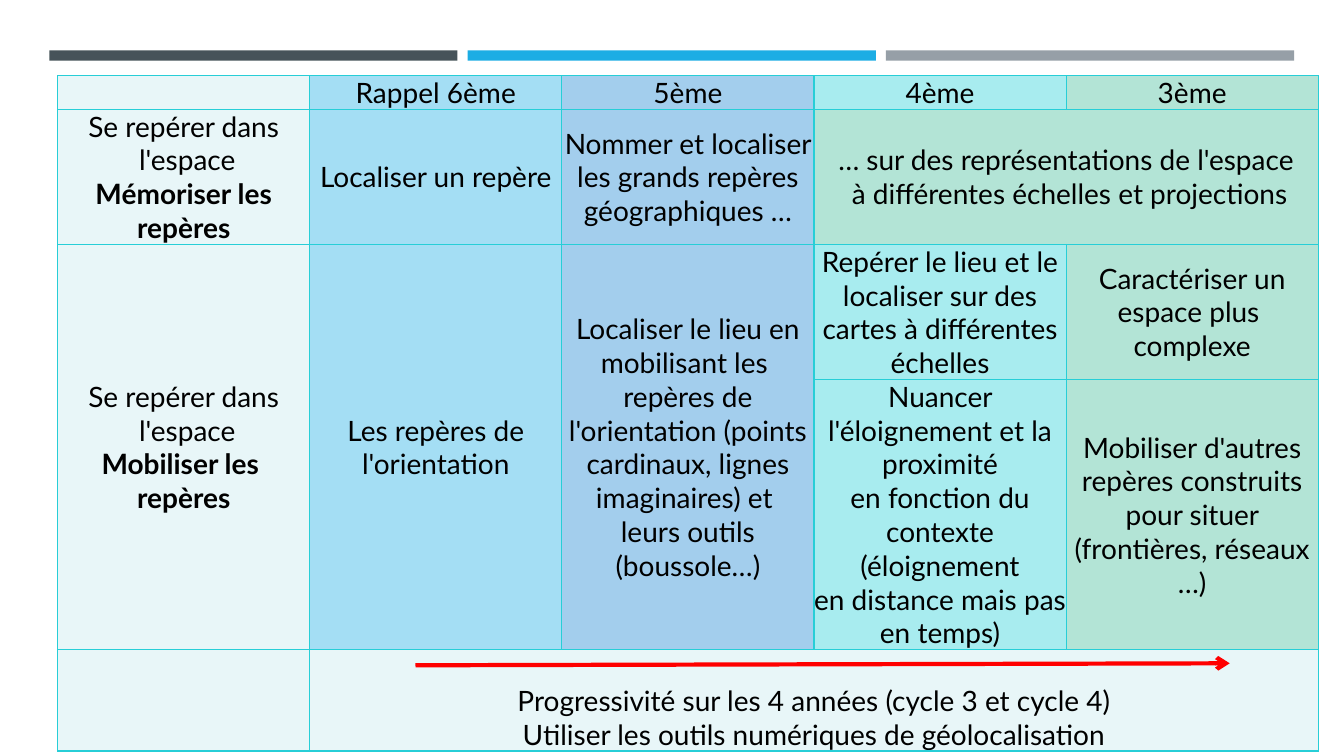
from lxml.etree import SubElement
from pptx import Presentation
from pptx.dml.color import RGBColor
from pptx.enum.shapes import MSO_CONNECTOR, MSO_SHAPE
from pptx.enum.text import MSO_ANCHOR, PP_ALIGN
from pptx.oxml import parse_xml
from pptx.oxml.ns import nsdecls, qn
from pptx.util import Pt

SLATE = RGBColor(0x46, 0x53, 0x59)
CYAN = RGBColor(0x1C, 0xAD, 0xE4)
GREY = RGBColor(0x96, 0x9F, 0xA7)
PALE = RGBColor(0xE8, 0xF6, 0xF8)
SKY = RGBColor(0xA4, 0xDE, 0xF4)
BLUE = RGBColor(0xA3, 0xCE, 0xED)
AQUA = RGBColor(0xA8, 0xEC, 0xEF)
MINT = RGBColor(0xB3, 0xE4, 0xD6)
TEAL = RGBColor(0x27, 0xCE, 0xD7)
RED = RGBColor(0xFF, 0x00, 0x00)
BLACK = RGBColor(0x00, 0x00, 0x00)

COLUMN_FILLS = [PALE, SKY, BLUE, AQUA, MINT]
ROW_HEIGHTS = [23, 93, 93, 186, 70]
MERGES = [(1, 3, 1, 4), (2, 0, 3, 0), (2, 1, 3, 1), (2, 2, 3, 2), (4, 1, 4, 4)]
TEXTS = {
    (0, 1): ["Rappel 6ème"],
    (0, 2): ["5ème"],
    (0, 3): ["4ème"],
    (0, 4): ["3ème"],
    (1, 0): ["Se repérer dans\n l'espace\n", "Mémoriser les repères"],
    (1, 1): ["Localiser un repère"],
    (1, 2): ["Nommer et localiser les grands repères\ngéographiques …"],
    (1, 3): ["… sur des représentations de l'espace\n"
             " à différentes échelles et projections"],
    (2, 0): ["Se repérer dans\n l'espace\n", "Mobiliser les \nrepères"],
    (2, 1): ["Les repères de l'orientation"],
    (2, 2): ["Localiser le lieu en mobilisant les \n"
             "repères de l'orientation (points\n"
             "cardinaux, lignes imaginaires) et \n"
             "leurs outils (boussole…)"],
    (2, 3): ["Repérer le lieu et le localiser sur des\n"
             "cartes à différentes échelles"],
    (2, 4): ["Caractériser un espace plus \ncomplexe"],
    (3, 3): ["Nuancer l'éloignement et la proximité\n"
             "en fonction du contexte (éloignement\n"
             "en distance mais pas en temps)"],
    (3, 4): ["Mobiliser d'autres repères construits\n"
             "pour situer (frontières, réseaux …)"],
    (4, 1): ["Progressivité sur les 4 années (cycle 3 et cycle 4)\n"
             "Utiliser les outils numériques de géolocalisation"],
}


class SlideBuilder:
    font = "Lato"
    size = 20

    def __init__(self, s):
        self.s = s

    def bar(self, x, y, w, h, color):
        sp = self.s.shapes.add_shape(MSO_SHAPE.RECTANGLE, Pt(x), Pt(y), Pt(w), Pt(h))
        sp.shadow.inherit = False
        sp.fill.solid()
        sp.fill.fore_color.rgb = color
        sp.line.fill.background()

    def table(self, x, y, col_width, row_heights, cols):
        rows = len(row_heights)
        tbl = self.s.shapes.add_table(rows, cols, Pt(x), Pt(y), Pt(col_width * cols),
                                      Pt(sum(row_heights))).table
        tbl.first_row = tbl.horz_banding = False
        for col in tbl.columns:
            col.width = Pt(col_width)
        for row, height in zip(tbl.rows, row_heights):
            row.height = Pt(height)
        return tbl

    def style_cell(self, cell, fill, top=0):
        cell.margin_left = cell.margin_right = cell.margin_bottom = 0
        cell.margin_top = Pt(top)
        cell.vertical_anchor = MSO_ANCHOR.MIDDLE
        cell.fill.solid()
        cell.fill.fore_color.rgb = fill
        tcPr = cell._tc.get_or_add_tcPr()
        for i, side in enumerate(["lnL", "lnR", "lnT", "lnB"]):
            tcPr.insert(i, parse_xml(
                f'<a:{side} {nsdecls("a")} w="{Pt(1)}"><a:solidFill>'
                f'<a:srgbClr val="{TEAL}"/></a:solidFill></a:{side}>'))

    def cell_text(self, cell, parts):
        p = cell.text_frame.paragraphs[0]
        p.alignment = PP_ALIGN.CENTER
        for part, text in enumerate(parts):
            for i, line in enumerate(text.split("\n")):
                if i:
                    p.add_line_break()
                if line:
                    r = p.add_run()
                    r.text = line
                    r.font.name = self.font
                    r.font.size = Pt(self.size)
                    r.font.bold = part > 0
                    r.font.color.rgb = BLACK

    def arrow(self, x1, y1, x2, y2, color, width):
        cx = self.s.shapes.add_connector(MSO_CONNECTOR.STRAIGHT,
                                         Pt(x1), Pt(y1), Pt(x2), Pt(y2))
        cx.line.color.rgb = color
        cx.line.width = Pt(width)
        SubElement(cx.line._get_or_add_ln(), qn("a:tailEnd"), type="arrow")
        SubElement(cx._element.spPr, qn("a:effectLst"))


def main():
    prs = Presentation()
    prs.slide_width, prs.slide_height = Pt(960), Pt(540)
    b = SlideBuilder(prs.slides.add_slide(prs.slide_layouts[6]))

    for i, color in enumerate([SLATE, CYAN, GREY]):
        b.bar(35.2 + i * 298.8, 36, 291.6, 7.4, color)

    tbl = b.table(41.2, 54, 180.1, ROW_HEIGHTS, len(COLUMN_FILLS))
    last = len(ROW_HEIGHTS) - 1
    for row in range(len(ROW_HEIGHTS)):
        for col, fill in enumerate(COLUMN_FILLS):
            if row == last:
                fill = PALE
            elif (row, col) == (1, 3):
                fill = MINT
            b.style_cell(tbl.cell(row, col), fill, 24 if row == last else 0)
    for top, left, bottom, right in MERGES:
        tbl.cell(top, left).merge(tbl.cell(bottom, right))
    for (row, col), parts in TEXTS.items():
        b.cell_text(tbl.cell(row, col), parts)

    b.arrow(296.8, 475.2, 878.4, 473.8, RED, 3)
    prs.save("out.pptx")


if __name__ == "__main__":
    main()
